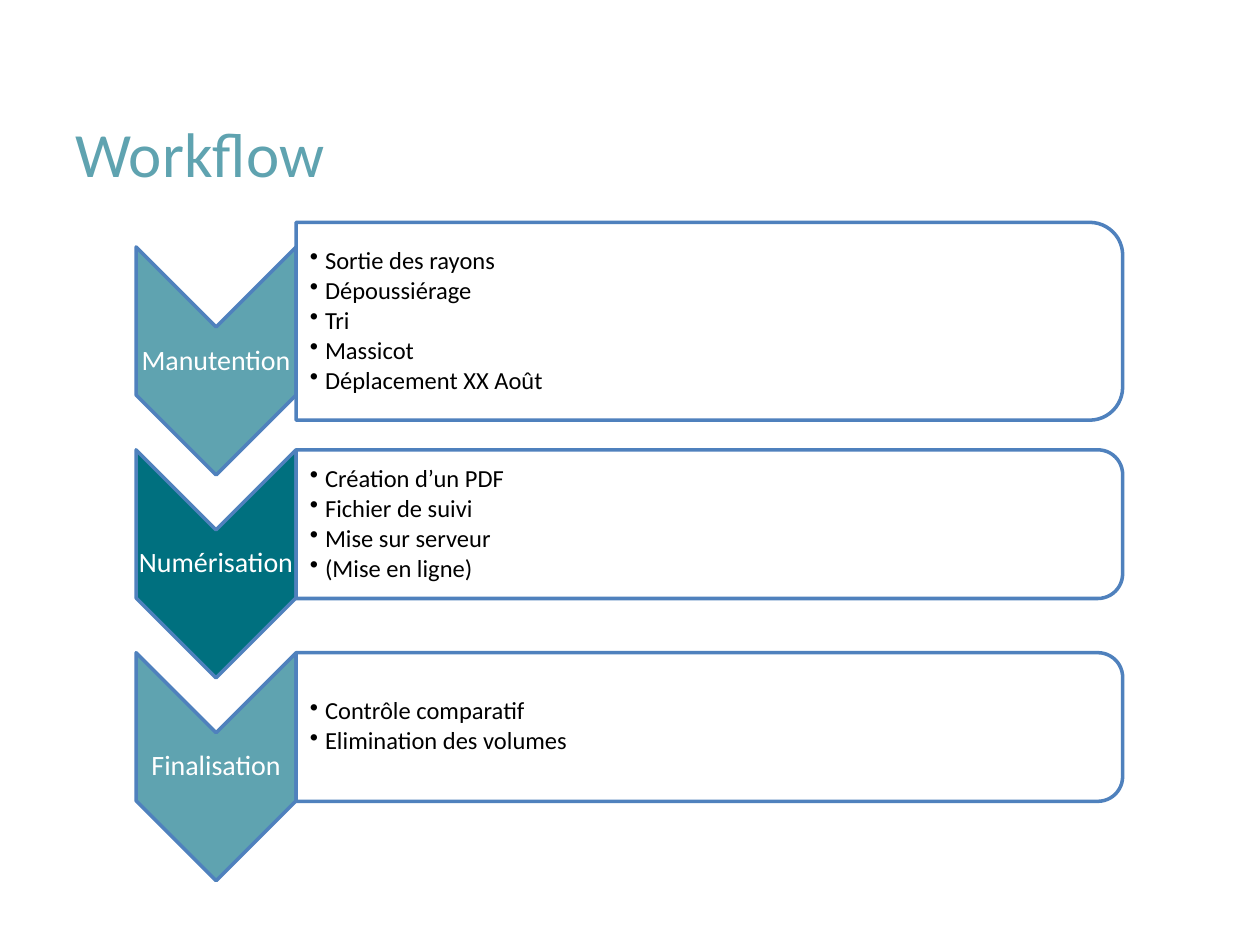
"""Build the Workflow slide: three chevron stages, each with a panel of steps."""
import pptx
import pptx.dml.color
import pptx.enum.shapes
import pptx.enum.text
import pptx.oxml.ns
import pptx.util
from lxml import etree

Inches, Pt = pptx.util.Inches, pptx.util.Pt
RGB = pptx.dml.color.RGBColor.from_string
MSO = pptx.enum.shapes.MSO_SHAPE
ALIGN = pptx.enum.text.PP_ALIGN
MIDDLE = pptx.enum.text.MSO_ANCHOR.MIDDLE
qn = pptx.oxml.ns.qn

COLORS = {"light": "5FA3B0", "dark": "00707F", "line": "4F81BD", "white": "FFFFFF", "black": "000000"}
STAGES = [
    ("Manutention", "light", 1.57,
     ["Sortie des rayons", "Dépoussiérage", "Tri", "Massicot", "Déplacement XX Août"]),
    ("Numérisation", "dark", 1.18,
     ["Création d’un PDF", "Fichier de suivi", "Mise sur serveur", "(Mise en ligne)"]),
    ("Finalisation", "light", 1.18, ["Contrôle comparatif", "Elimination des volumes"]),
]
STEP = 1.61
CHEVRON_LENGTH, CHEVRON_WIDTH, CHEVRON_X, CHEVRON_Y = 1.81, 1.27, 1.715, 2.865
PANEL_WIDTH, PANEL_X, PANEL_Y = 6.56, 5.63, 2.55


def add_turned_shape(shapes, kind, x, y, width, height, color):
    """Add a shape centred on x, y and turned by a quarter."""
    sp = shapes.add_shape(kind, Inches(x - width / 2), Inches(y - height / 2), Inches(width), Inches(height))
    sp.rotation = 90
    sp.shadow.inherit = False
    sp.fill.solid()
    sp.fill.fore_color.rgb = RGB(COLORS[color])
    sp.line.color.rgb = RGB(COLORS["line"])
    sp.line.width = Pt(2)
    return sp


def add_text(shapes, box, lines, size, color, left_inset=0.01, bullets=False):
    """Add a middle-anchored text box with one paragraph per line."""
    tf = shapes.add_textbox(*map(Inches, box)).text_frame
    frame = {"word_wrap": True, "vertical_anchor": MIDDLE, "margin_left": Inches(left_inset),
             "margin_right": Inches(0.01), "margin_top": Inches(0.01), "margin_bottom": Inches(0.01)}
    for name, value in frame.items():
        setattr(tf, name, value)
    for i, line in enumerate(lines):
        p = tf.paragraphs[0] if i == 0 else tf.add_paragraph()
        p.line_spacing = 0.9
        p.alignment = ALIGN.LEFT if bullets else ALIGN.CENTER
        if bullets:
            p.level = 1
            p.space_after = Pt(2)
            pPr = p._p.get_or_add_pPr()
            pPr.set("marL", str(Inches(0.12)))
            pPr.set("indent", str(Inches(-0.12)))
            etree.SubElement(pPr, qn("a:buChar")).set("char", "•")
        r = p.add_run()
        r.text = line
        for name, value in {"name": "Calibri", "size": Pt(size)}.items():
            setattr(r.font, name, value)
        r.font.color.rgb = RGB(COLORS[color])


prs = pptx.Presentation()
prs.slide_width, prs.slide_height = Inches(10), Inches(7.5)
s = prs.slides.add_slide(prs.slide_layouts[5])

title = s.shapes.title
for name, value in {"left": 0.5, "top": 0.87, "width": 9, "height": 0.68}.items():
    setattr(title, name, Inches(value))
tf = title.text_frame
tf.text = "Workflow"
tf.vertical_anchor = MIDDLE
p = tf.paragraphs[0]
p.alignment = ALIGN.LEFT
r = p.runs[0]
for name, value in {"name": "Calibri", "size": Pt(36)}.items():
    setattr(r.font, name, value)
r.font.color.rgb = RGB(COLORS["light"])

shapes = s.shapes.add_group_shape().shapes
for i, (label, color, height, steps) in enumerate(STAGES):
    chevron_y, panel_y = CHEVRON_Y + i * STEP, PANEL_Y + i * STEP
    add_turned_shape(shapes, MSO.CHEVRON, CHEVRON_X, chevron_y, CHEVRON_LENGTH, CHEVRON_WIDTH, color)
    add_text(shapes, (1.08, chevron_y - 0.27, CHEVRON_WIDTH, 0.54), [label], 16, "white")
    panel = add_turned_shape(shapes, MSO.ROUND_2_SAME_RECTANGLE, PANEL_X, panel_y, height, PANEL_WIDTH, "white")
    fill_color = panel.fill._xPr.find(qn("a:solidFill"))[0]
    etree.SubElement(fill_color, qn("a:alpha")).set("val", "90000")
    text_height = 0.9 * height
    add_text(shapes, (2.35, panel_y - text_height / 2, 6.5, text_height), steps, 14, "black", 0.11, True)

prs.save("out.pptx")
